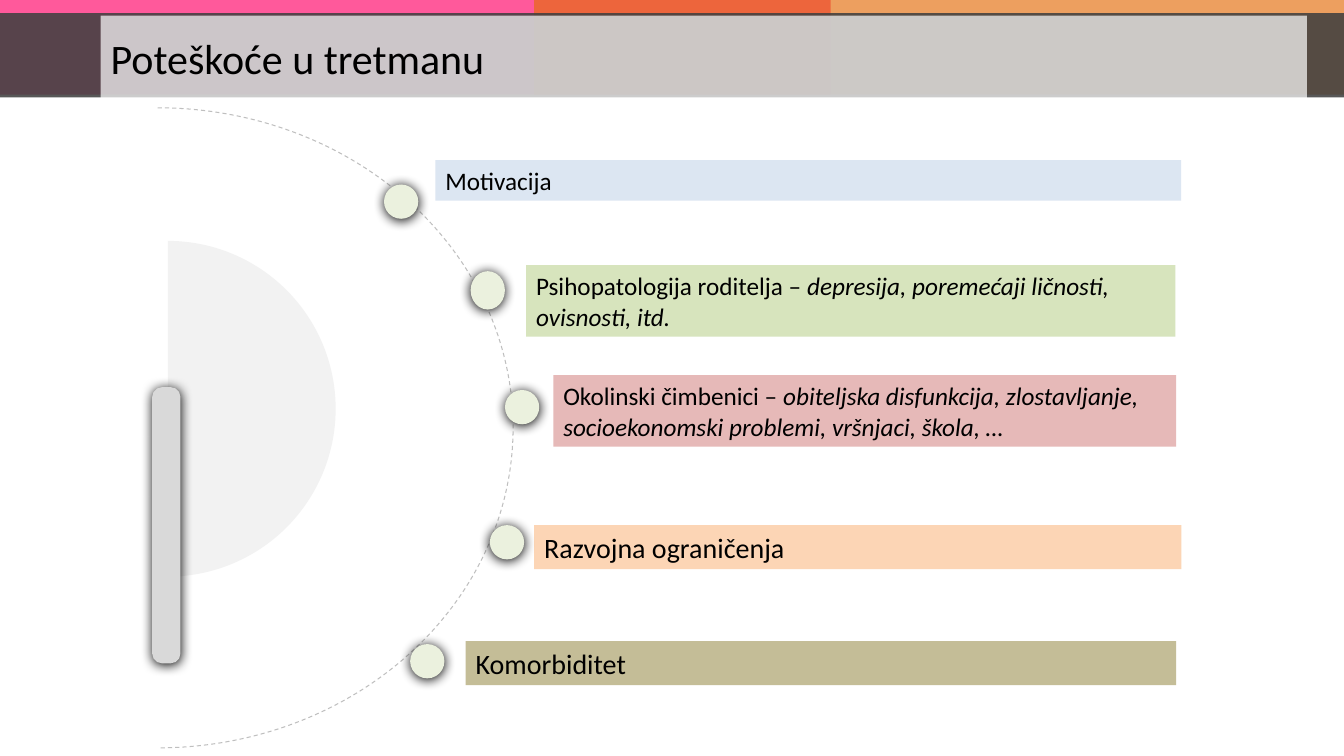
from lxml import etree
from pptx import Presentation
from pptx.dml.color import RGBColor
from pptx.enum.dml import MSO_LINE
from pptx.enum.shapes import MSO_SHAPE as SHAPE
from pptx.enum.text import MSO_ANCHOR, MSO_AUTO_SIZE, PP_ALIGN
from pptx.oxml import parse_xml
from pptx.oxml.ns import nsdecls, qn
from pptx.util import Pt

COLORS = {
    "white": "FFFFFF", "black": "000000", "dash": "BFBFBF",
    "half_disc": "F2F2F2", "pill": "D9D9D9", "dot": "EBF1DE",
    "blue": "DCE6F2", "green": "D7E4BD", "red": "E6B9B8",
    "orange": "FCD5B5", "olive": "C4BD97",
    "pink_band": "FF0066", "orange_band": "E46C0A", "dark_band": "404040",
}
SHADOW = (
    f'<a:effectLst {nsdecls("a")}><a:outerShdw blurRad="{Pt(8.5)}" '
    f'dist="{Pt(1)}" dir="5400000" algn="ctr" rotWithShape="0">'
    f'<a:srgbClr val="{COLORS["black"]}"/></a:outerShdw></a:effectLst>'
)


def add_filled(kind, box, color, alpha=100, shadow=False, adj=()):
    """Add a borderless shape; box is left, top, width, height in points."""
    sp = s.shapes.add_shape(kind, *map(Pt, box))
    for i, value in enumerate(adj):
        sp.adjustments[i] = value
    sp.line.fill.background()
    paint(sp, color, alpha)
    if shadow:
        sp.element.spPr.append(parse_xml(SHADOW))
    else:
        sp.shadow.inherit = False
    return sp


def paint(sp, color, alpha=100):
    """Fill a shape with a named colour at an opacity in percent."""
    sp.fill.solid()
    sp.fill.fore_color.rgb = RGBColor.from_string(COLORS[color])
    if alpha < 100:
        clr = sp.element.spPr.find(".//" + qn("a:srgbClr"))
        etree.SubElement(clr, qn("a:alpha")).set("val", str(alpha * 1000))


prs = Presentation()
prs.slide_width, prs.slide_height = Pt(960), Pt(540)
s = prs.slides.add_slide(prs.slide_layouts[5])

# Dashed arc that carries the dots
arc = add_filled(SHAPE.ARC, (-141.1, 77, 507.6, 457.2), "white", adj=(162, 53.71))
arc.line.color.rgb = RGBColor.from_string(COLORS["dash"])
arc.line.width = Pt(0.75)
arc.line.dash_style = MSO_LINE.DASH

# Bars: box, colour, text size, plain text, italic text
bars = [
    ((311, 114.5, 532.8, 28.8), "blue", 18, "Motivacija", ""),
    ((375.8, 189.4, 463.9, 51.1), "green", 18, "Psihopatologija roditelja – ",
     "depresija, poremećaji ličnosti, ovisnosti, itd."),
    ((395.3, 267.9, 444.8, 51.1), "red", 18, "Okolinski čimbenici – ",
     "obiteljska disfunkcija, zlostavljanje, socioekonomski problemi, vršnjaci, škola, …"),
    ((381.6, 375.1, 462.2, 31.5), "orange", 20, "Razvojna ograničenja", ""),
    ((332.6, 457.9, 507.6, 31.5), "olive", 20, "Komorbiditet", ""),
]
texts = []
for box, color, size, plain, italic in bars:
    bar = add_filled(SHAPE.RECTANGLE, box, color)
    texts.append((bar, size, plain, italic))

dots = [(274.3, 131.8, 24.5), (336.2, 193.7, 27.4), (360.7, 278.6, 24.5),
        (349.9, 375.1, 24.5), (293, 460.1, 24.5)]
for left, top, height in dots:
    add_filled(SHAPE.OVAL, (left, top, 24.5, height), "dot", shadow=True)

add_filled(SHAPE.ARC, (0, 172.1, 239.8, 239.8), "half_disc", adj=(162, 53.6))
pill = add_filled(SHAPE.ROUNDED_RECTANGLE, (108.7, 276.5, 20.2, 197.3), "pill",
                  shadow=True, adj=(0.35,))
pill.rotation = 180

# Header bands, with the title on top of them
add_filled(SHAPE.RECTANGLE, (0, 0, 593.3, 67.7), "pink_band", 65)
add_filled(SHAPE.RECTANGLE, (381.6, 0, 578.4, 67.7), "orange_band", 65)
add_filled(SHAPE.RECTANGLE, (0, 9.4, 960, 60.2), "dark_band", 88)
title = s.shapes.title
title.left, title.top, title.width, title.height = map(Pt, (71.8, 18.5, 861.8, 45.4))
paint(title, "white", 70)
s.shapes.element.append(title.element)
texts.append((title, 30, "Poteškoće u tretmanu", ""))

frame_format = {"word_wrap": True, "auto_size": MSO_AUTO_SIZE.SHAPE_TO_FIT_TEXT,
                "vertical_anchor": MSO_ANCHOR.MIDDLE}
for sp, size, plain, italic in texts:
    tf = sp.text_frame
    for name, value in frame_format.items():
        setattr(tf, name, value)
    p = tf.paragraphs[0]
    p.alignment = PP_ALIGN.LEFT
    for text, slanted in ((plain, False), (italic, True)):
        if text:
            r = p.add_run()
            r.text = text
            for name, value in {"name": "Calibri", "size": Pt(size), "italic": slanted}.items():
                setattr(r.font, name, value)
            r.font.color.rgb = RGBColor.from_string(COLORS["black"])

prs.save("out.pptx")
